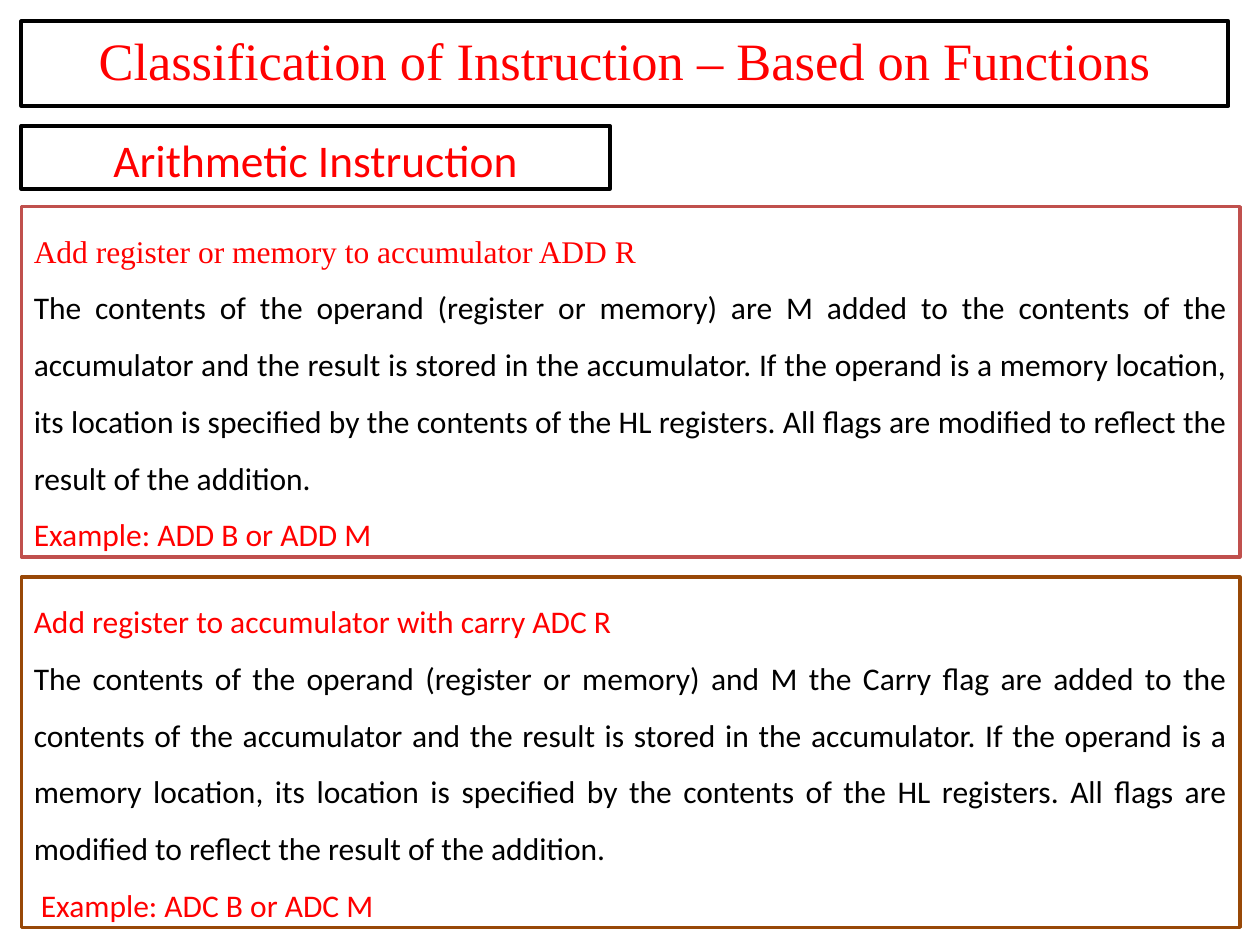
"""Build a slide on arithmetic instructions of a microprocessor."""
from dataclasses import dataclass

import pptx
import pptx.dml.color
import pptx.enum.shapes
import pptx.enum.text
import pptx.util
from pptx.util import Inches

ALIGN = pptx.enum.text.PP_ALIGN
AUTO_SIZE = pptx.enum.text.MSO_AUTO_SIZE
LEFT = 0.17
RED, BLACK, WHITE = "FF0000", "000000", "FFFFFF"
SERIF, SANS = "Times New Roman", "Calibri"


@dataclass
class Line:
    text: str
    color: str = RED
    font: str = SANS
    size: float = 18
    align: ALIGN = ALIGN.LEFT
    spacing: float = 1.0
    before: float = 0


@dataclass
class Instruction:
    top: float
    border: str
    heading: Line
    description: str
    example: str


def rgb(color: str) -> pptx.dml.color.RGBColor:
    return pptx.dml.color.RGBColor.from_string(color)


def write(frame, lines: list[Line], auto_size=AUTO_SIZE.NONE) -> None:
    frame.word_wrap = True
    frame.auto_size = auto_size
    frame.vertical_anchor = pptx.enum.text.MSO_ANCHOR.TOP
    for index, line in enumerate(lines):
        paragraph = frame.add_paragraph() if index else frame.paragraphs[0]
        paragraph.alignment = line.align
        paragraph.line_spacing = line.spacing
        paragraph.space_before = pptx.util.Pt(line.before)
        run = paragraph.add_run()
        run.text = line.text
        run.font.name = line.font
        run.font.size = pptx.util.Pt(line.size)
        run.font.color.rgb = rgb(line.color)


def outline(shape, color: str, width: float) -> None:
    shape.line.color.rgb = rgb(color)
    shape.line.width = pptx.util.Pt(width)


def add_box(slide, top: float, width: float, height: float):
    box = slide.shapes.add_shape(
        pptx.enum.shapes.MSO_SHAPE.RECTANGLE,
        Inches(LEFT), Inches(top), Inches(width), Inches(height))
    box.shadow.inherit = False
    return box


def add_title(slide, line: Line) -> None:
    title = slide.shapes.title
    title.left, title.top = Inches(LEFT), Inches(0.17)
    title.width, title.height = Inches(9.58), Inches(0.67)
    outline(title, BLACK, 2.25)
    write(title.text_frame, [line])


def add_subtitle(slide, line: Line) -> None:
    box = add_box(slide, 1, 4.67, 0.5)
    box.fill.background()
    outline(box, BLACK, 2.25)
    write(box.text_frame, [line])


def add_instruction(slide, instruction: Instruction) -> None:
    box = add_box(slide, instruction.top, 9.67, 2.78)
    box.fill.solid()
    box.fill.fore_color.rgb = rgb(WHITE)
    outline(box, instruction.border, 2)
    description = Line(instruction.description, BLACK, align=ALIGN.JUSTIFY, spacing=1.5)
    example = Line(instruction.example, spacing=1.5)
    write(box.text_frame, [instruction.heading, description, example],
          AUTO_SIZE.SHAPE_TO_FIT_TEXT)


INSTRUCTIONS = [
    Instruction(
        1.64, "C0504D",
        Line("Add register or memory to accumulator ADD R", font=SERIF, spacing=1.5),
        "The contents of the operand (register or memory) are M added to the contents "
        "of the accumulator and the result is stored in the accumulator. If the operand "
        "is a memory location, its location is specified by the contents of the HL "
        "registers. All flags are modified to reflect the result of the addition.",
        "Example: ADD B or ADD M "),
    Instruction(
        4.58, "984807",
        Line("Add register to accumulator with carry ADC R", spacing=1.5),
        "The contents of the operand (register or memory) and M the Carry flag are added "
        "to the contents of the accumulator and the result is stored in the accumulator. "
        "If the operand is a memory location, its location is specified by the contents "
        "of the HL registers. All flags are modified to reflect the result of the addition.",
        " Example: ADC B or ADC M"),
]


def main() -> None:
    deck = pptx.Presentation()
    deck.slide_width, deck.slide_height = Inches(10), Inches(7.5)
    slide = deck.slides.add_slide(deck.slide_layouts.get_by_name("Title Only"))
    add_title(slide, Line("Classification of Instruction – Based on Functions",
                          font=SERIF, size=30, align=ALIGN.CENTER, before=3))
    add_subtitle(slide, Line("Arithmetic Instruction", size=25.9,
                             align=ALIGN.CENTER, before=2))
    for instruction in INSTRUCTIONS:
        add_instruction(slide, instruction)
    deck.save("out.pptx")


if __name__ == "__main__":
    main()
